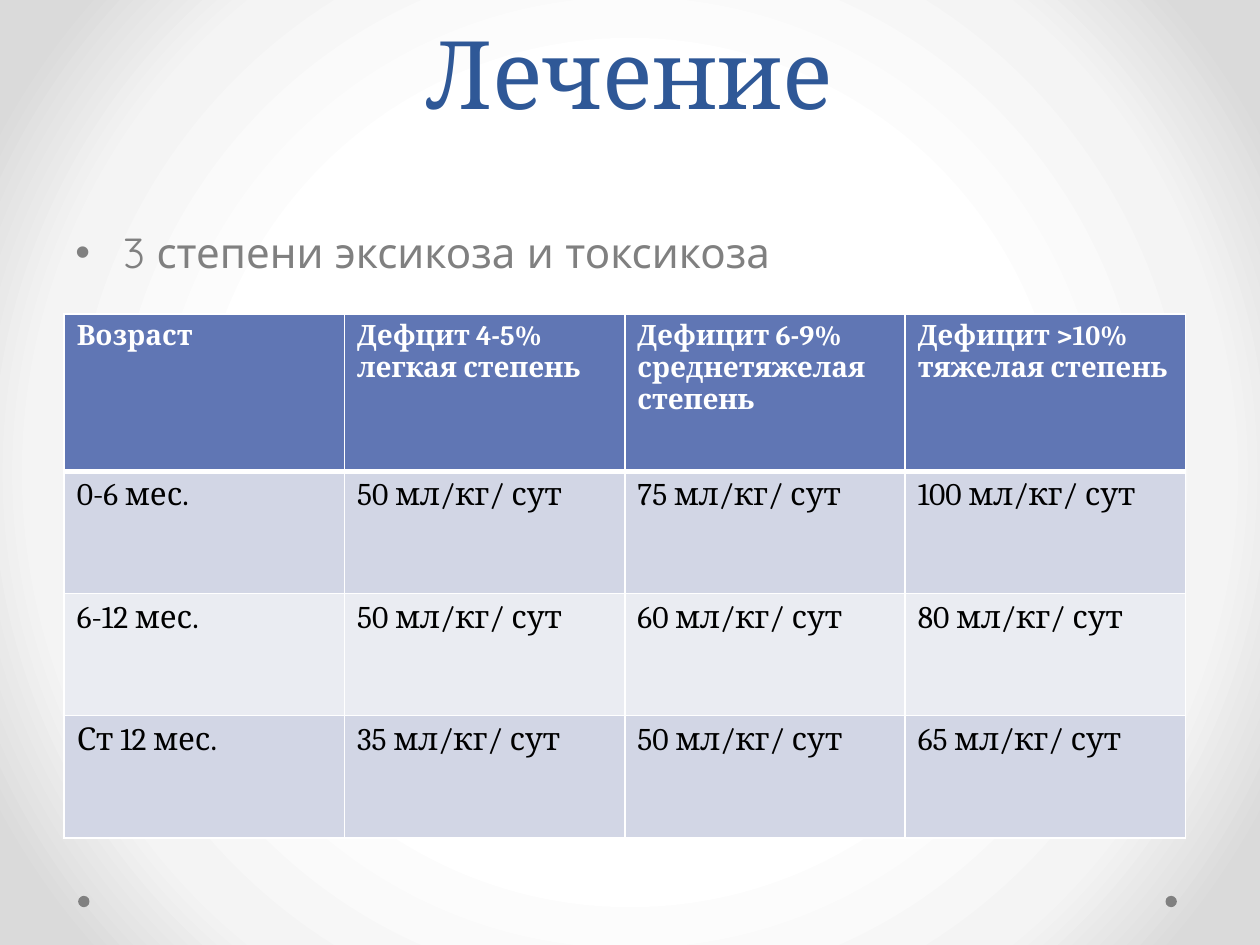
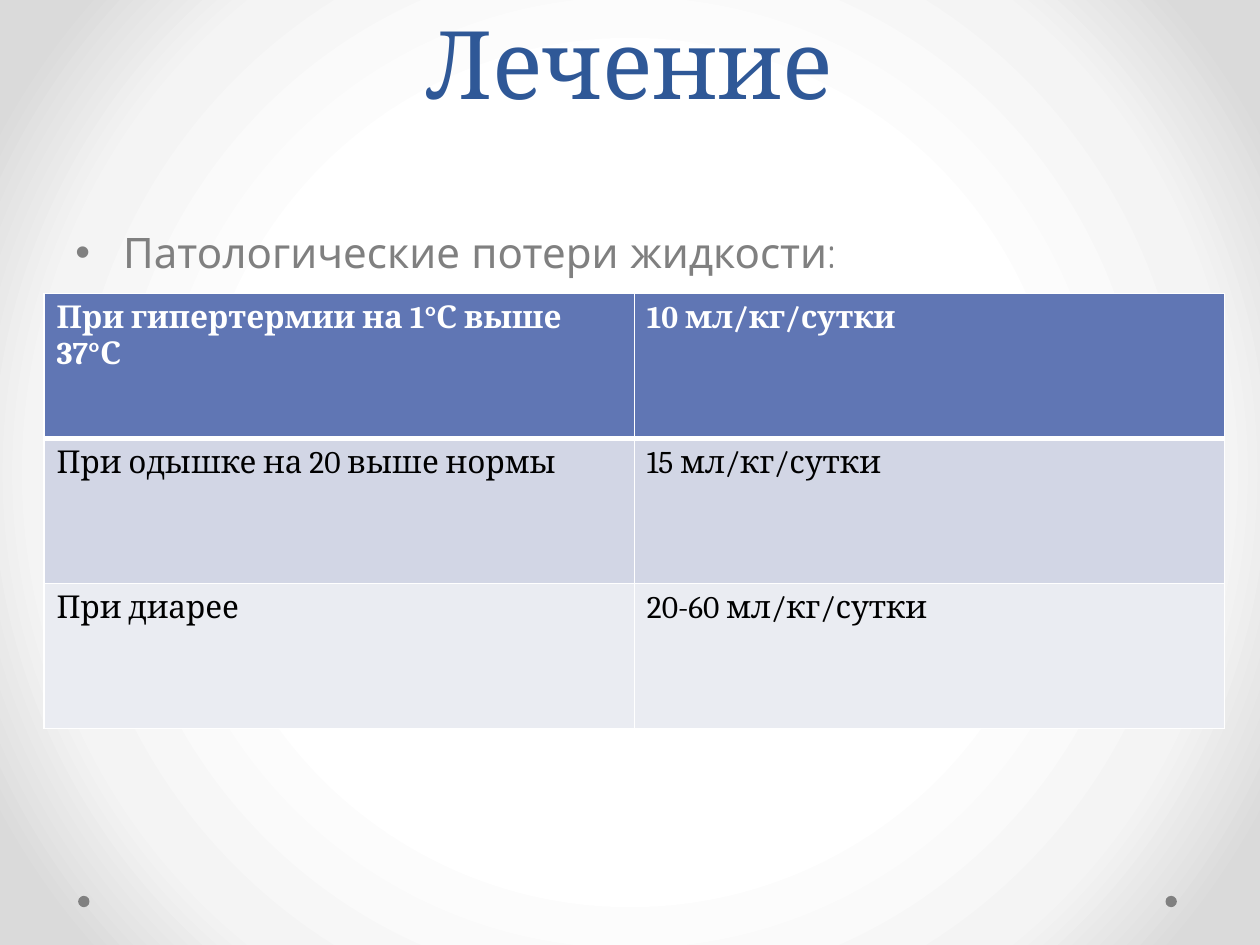
from lxml.etree import SubElement
from pptx import Presentation
from pptx.dml.color import RGBColor
from pptx.enum.shapes import MSO_SHAPE
from pptx.enum.text import MSO_ANCHOR, PP_ALIGN
from pptx.oxml import parse_xml
from pptx.oxml.ns import nsdecls, qn
from pptx.util import Inches, Pt

SLIDES = [
    {
        "title": "Лечение",
        "title_height": 1.07,
        "bullet": "3 степени эксикоза и токсикоза",
        "table_box": (0.51, 2.49, 8.9),
        "row_heights": (1.25, 0.97),
        "header_size": 16,
        "rows": [
            ("Возраст", "Дефцит 4-5% легкая степень",
             "Дефицит 6-9% среднетяжелая степень", "Дефицит >10% тяжелая степень"),
            ("0-6 мес.", "50 мл/кг/ сут", "75 мл/кг/ сут", "100 мл/кг/ сут"),
            ("6-12 мес.", "50 мл/кг/ сут", "60 мл/кг/ сут", "80 мл/кг/ сут"),
            ("Ст 12 мес.", "35 мл/кг/ сут", "50 мл/кг/ сут", "65 мл/кг/ сут"),
        ],
    },
    {
        "title": "Лечение",
        "title_height": 0.99,
        "bullet": "Патологические потери жидкости:",
        "table_box": (0.35, 2.33, 9.37),
        "row_heights": (1.15, 1.15),
        "header_size": 18,
        "rows": [
            ("При гипертермии на 1°С выше 37°С", "10 мл/кг/сутки"),
            ("При одышке на 20 выше нормы", "15 мл/кг/сутки"),
            ("При диарее", "20-60 мл/кг/сутки"),
        ],
    },
]

WIDTH, HEIGHT = 10, 7.5
MARGIN = 0.5
BODY_TOP, BODY_HEIGHT = 1.75, 4.95
BODY_INDENT = 0.38
DOT_SIZE, DOT_TOP = 0.09, 7.11
DOT_LEFTS = (0.62, 9.25)
CELL_SIZE = 18
HEADING_FONT, BODY_FONT = "Cambria", "Quicksand"

TITLE_BLUE = RGBColor(0x2F, 0x58, 0x97)
HEADER_BLUE = RGBColor(0x60, 0x76, 0xB4)
BAND_DARK = RGBColor(0xD2, 0xD6, 0xE5)
BAND_LIGHT = RGBColor(0xEA, 0xEC, 0xF2)
GRAY = RGBColor(0x80, 0x80, 0x80)
WHITE = RGBColor(0xFF, 0xFF, 0xFF)
BLACK = RGBColor(0x00, 0x00, 0x00)
BACKDROP_STOPS = [
    (50, WHITE),
    (76, RGBColor(0xF4, 0xF4, 0xF4)),
    (92, RGBColor(0xDA, 0xDA, 0xDA)),
]


def set_backdrop(master):
    master.background.fill.gradient()
    gradient = master.element.find(f".//{qn('p:bgPr')}/{qn('a:gradFill')}")
    stops = "".join(
        f'<a:gs pos="{share * 1000}"><a:srgbClr val="{color}"/></a:gs>'
        for share, color in BACKDROP_STOPS
    )
    gradient.getparent().replace(gradient, parse_xml(
        f'<a:gradFill {nsdecls("a")} rotWithShape="1"><a:gsLst>{stops}</a:gsLst>'
        '<a:path path="circle"><a:fillToRect l="50000" t="50000" r="50000" b="50000"/>'
        "</a:path></a:gradFill>"
    ))


def format_runs(paragraph, font_name, size, color, bold=False):
    for run in paragraph.runs:
        run.font.name = font_name
        run.font.size = Pt(size)
        run.font.color.rgb = color
        run.font.bold = bold


def add_text(slide, text, top, height):
    box = slide.shapes.add_textbox(
        Inches(MARGIN), Inches(top), Inches(WIDTH - 2 * MARGIN), Inches(height))
    box.text_frame.word_wrap = True
    box.text_frame.text = text
    return box.text_frame, box.text_frame.paragraphs[0]


def add_title(slide, text, height):
    text_frame, paragraph = add_text(slide, text, 0, height)
    text_frame.vertical_anchor = MSO_ANCHOR.BOTTOM
    paragraph.alignment = PP_ALIGN.CENTER
    paragraph.line_spacing = Pt(58)
    format_runs(paragraph, HEADING_FONT, 54, TITLE_BLUE)


def add_bullet(slide, text):
    text_frame, paragraph = add_text(slide, text, BODY_TOP, BODY_HEIGHT)
    paragraph.space_before = Pt(4.8)
    format_runs(paragraph, BODY_FONT, 24, GRAY)
    properties = paragraph._p.get_or_add_pPr()
    properties.set("marL", str(Inches(BODY_INDENT)))
    properties.set("indent", str(-Inches(BODY_INDENT)))
    SubElement(properties, qn("a:buFont"), typeface="Arial")
    SubElement(properties, qn("a:buChar"), char="•")


def add_dots(slide):
    for left in DOT_LEFTS:
        dot = slide.shapes.add_shape(
            MSO_SHAPE.OVAL, Inches(left), Inches(DOT_TOP), Inches(DOT_SIZE), Inches(DOT_SIZE))
        dot.shadow.inherit = False
        dot.fill.solid()
        dot.fill.fore_color.rgb = GRAY
        dot.line.fill.background()


def set_borders(cell, top, bottom):
    properties = cell._tc.get_or_add_tcPr()
    for side, width in (("L", 1), ("R", 1), ("T", top), ("B", bottom)):
        properties.append(parse_xml(
            f'<a:ln{side} {nsdecls("a")} w="{Pt(width)}"><a:solidFill>'
            f'<a:srgbClr val="{WHITE}"/></a:solidFill></a:ln{side}>'
        ))


def add_dose_table(slide, content):
    rows = content["rows"]
    left, top, width = content["table_box"]
    header_height, row_height = content["row_heights"]
    height = header_height + row_height * (len(rows) - 1)
    table = slide.shapes.add_table(
        len(rows), len(rows[0]), Inches(left), Inches(top), Inches(width), Inches(height)).table
    for column in table.columns:
        column.width = Inches(width / len(rows[0]))
    for row_index, texts in enumerate(rows):
        is_header = row_index == 0
        table.rows[row_index].height = Inches(header_height if is_header else row_height)
        band = BAND_DARK if row_index % 2 else BAND_LIGHT
        for column_index, text in enumerate(texts):
            cell = table.cell(row_index, column_index)
            cell.text_frame.text = text
            set_borders(cell, 3 if row_index == 1 else 1, 3 if is_header else 1)
            cell.fill.solid()
            cell.fill.fore_color.rgb = HEADER_BLUE if is_header else band
            format_runs(
                cell.text_frame.paragraphs[0], HEADING_FONT,
                content["header_size"] if is_header else CELL_SIZE,
                WHITE if is_header else BLACK, is_header)


def main():
    presentation = Presentation()
    presentation.slide_width = Inches(WIDTH)
    presentation.slide_height = Inches(HEIGHT)
    set_backdrop(presentation.slide_master)
    for content in SLIDES:
        slide = presentation.slides.add_slide(presentation.slide_layouts[6])
        add_dots(slide)
        add_title(slide, content["title"], content["title_height"])
        add_bullet(slide, content["bullet"])
        add_dose_table(slide, content)
    presentation.save("out.pptx")


if __name__ == "__main__":
    main()
